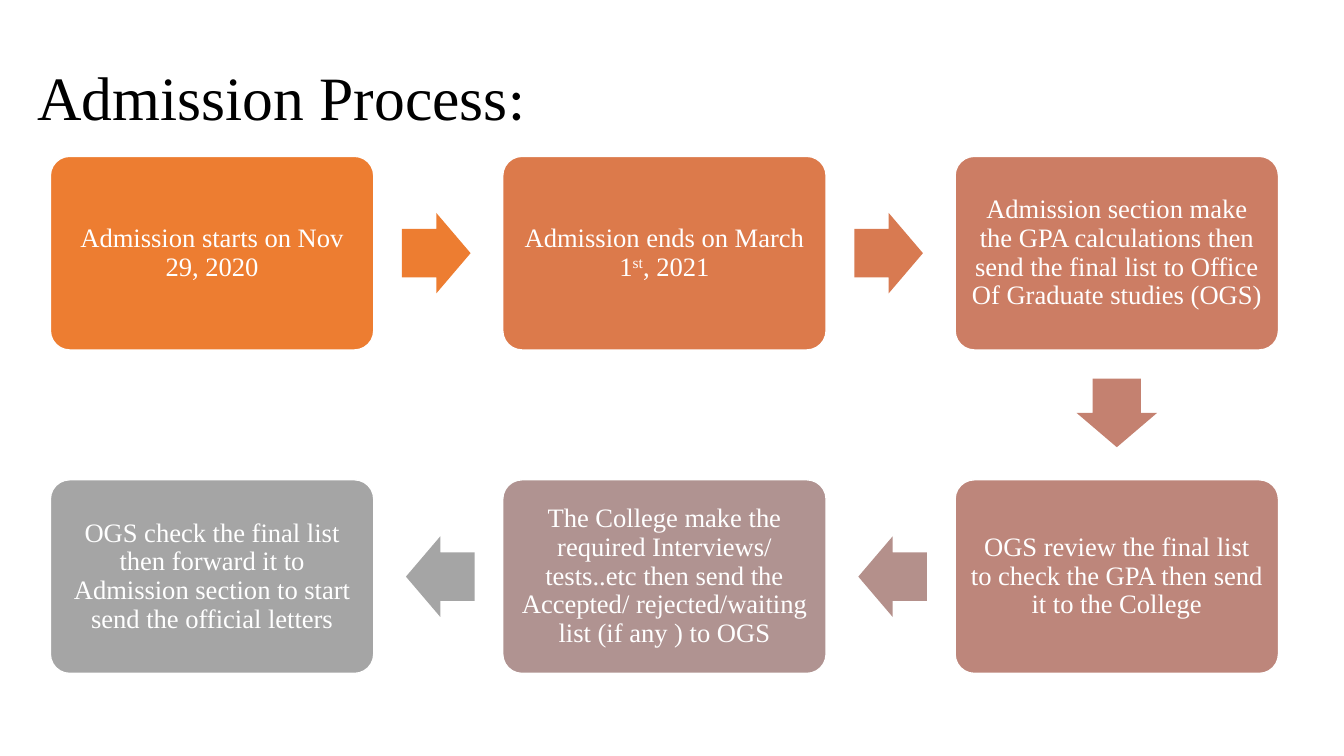
from math import cos, radians, sin
from pptx import Presentation
from pptx.dml.color import RGBColor
from pptx.enum.shapes import MSO_SHAPE as Kind
from pptx.enum.text import MSO_ANCHOR as Anchor, PP_ALIGN as Align
from pptx.util import Cm, Pt


def paint(color, hue):
    color.rgb = RGBColor.from_string(hue)


def write(para, text, size=19, hue="FFFFFF", face="Times New Roman", align=Align.CENTER, base=0):
    para.alignment = align
    para.line_spacing = 0.9
    for n, line in enumerate(text.split("\n")):
        if n:
            para.add_line_break()
        run = para.add_run()
        run.text = line
        run.font.size = Pt(size)
        run.font.name = face
        paint(run.font.color, hue)
        if base:
            run.font._element.set("baseline", str(base))


deck = Presentation()
deck.slide_width, deck.slide_height = Cm(33.87), Cm(19.05)
slide = deck.slides.add_slide(deck.slide_layouts[5])
shapes = slide.shapes

title = shapes.title
title.left, title.top, title.width, title.height = Cm(0.69), Cm(0.69), Cm(29.21), Cm(3.68)
title.text_frame.vertical_anchor = Anchor.MIDDLE
head = title.text_frame.paragraphs[0]
write(head, "Admission Process", size=44, hue="000000", align=Align.LEFT)
write(head, ":", size=44, hue="000000", face="Calibri", align=Align.LEFT)

steps = [
    (0, 0, "ED7D31", "Admission starts on Nov 29, 2020"),
    (1, 0, "DC7A4B", "Admission ends on March 1^st^, 2021"),
    (2, 0, "CC7D64", "Admission section make the GPA calculations then send "
                     "the final list to Office Of Graduate studies (OGS)"),
    (2, 1, "BD867B", "OGS review the final list\nto check the GPA then send it to the College"),
    (1, 1, "B09391", "The College make the required Interviews/ tests..etc then send "
                     "the Accepted/ rejected/waiting list (if any ) to OGS"),
    (0, 1, "A5A5A5", "OGS check the final list then forward it to Admission section "
                     "to start send the official letters"),
]
wide, high = 8.15, 4.88
spots = []
for col, row, hue, words in steps:
    left, top = 1.27 + 11.4 * col, 3.94 + 8.15 * row
    spots.append((left + wide / 2, top + high / 2))
    box = shapes.add_shape(Kind.ROUNDED_RECTANGLE, Cm(left), Cm(top), Cm(wide), Cm(high))
    box.adjustments[0] = 0.1
    box.shadow.inherit = False
    box.fill.solid()
    paint(box.fill.fore_color, hue)
    paint(box.line.color, "FFFFFF")
    box.line.width = Pt(1)
    frame = box.text_frame
    frame.word_wrap = True
    frame.vertical_anchor = Anchor.MIDDLE
    frame.margin_left = frame.margin_right = frame.margin_top = frame.margin_bottom = Cm(0.2)
    for n, part in enumerate(words.split("^")):
        write(frame.paragraphs[0], part, base=30000 * (n % 2))

long, broad, lag = 1.73, 2.03, 0.05
turns = [(0, "ED7D31"), (0, "D87A51"), (90, "C48170"), (180, "B4908B"), (180, "A5A5A5")]
for (turn, hue), start, end in zip(turns, spots, spots[1:]):
    x = (start[0] + end[0]) / 2 - lag * cos(radians(turn))
    y = (start[1] + end[1]) / 2 - lag * sin(radians(turn))
    arrow = shapes.add_shape(Kind.RIGHT_ARROW, Cm(x - long / 2), Cm(y - broad / 2), Cm(long), Cm(broad))
    arrow.adjustments[0], arrow.adjustments[1] = 0.6, 0.5
    arrow.rotation = turn
    arrow.shadow.inherit = False
    arrow.fill.solid()
    paint(arrow.fill.fore_color, hue)
    arrow.line.fill.background()

deck.save("out.pptx")
